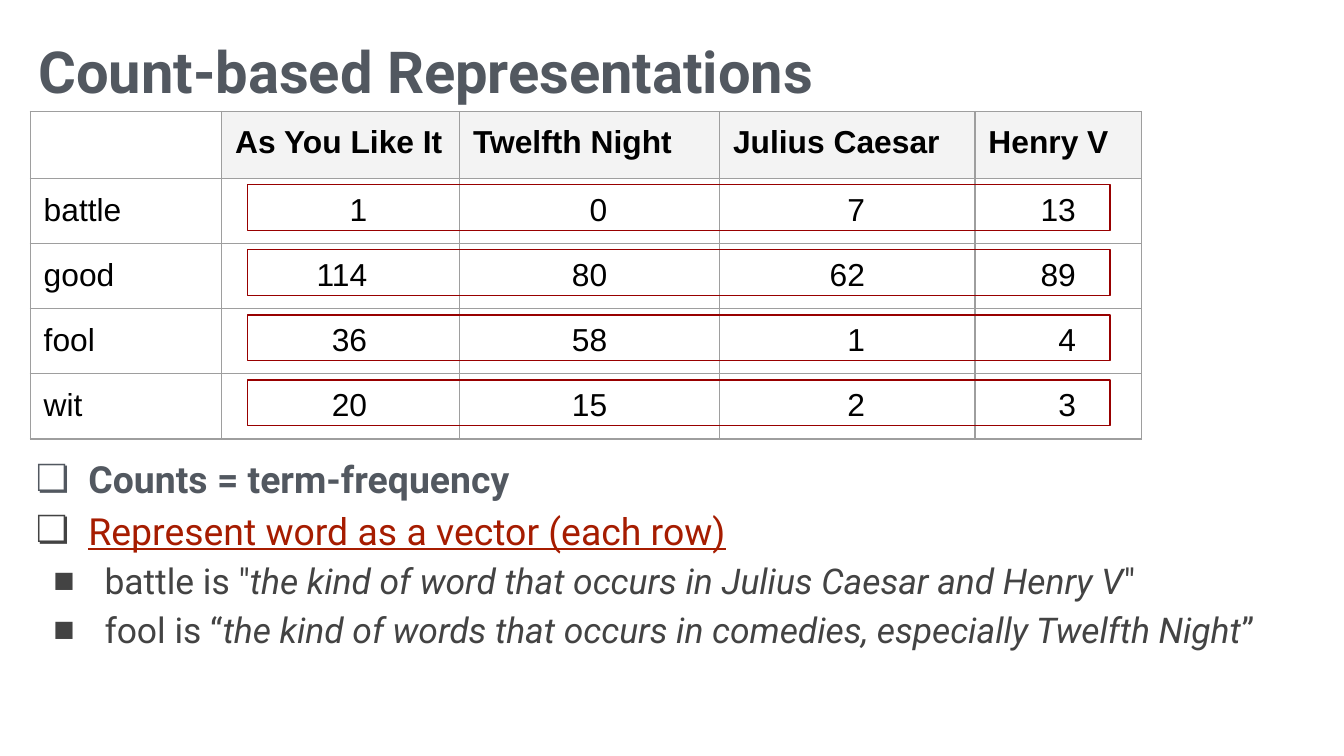
from dataclasses import dataclass

from lxml.etree import SubElement
from pptx import Presentation
from pptx.dml.color import RGBColor
from pptx.enum.shapes import MSO_SHAPE as Shape
from pptx.enum.text import MSO_ANCHOR as Anchor, MSO_AUTO_SIZE as AutoSize, PP_ALIGN as Align
from pptx.oxml import parse_xml
from pptx.oxml.ns import nsdecls, qn
from pptx.util import Inches, Pt

GRID = 0.1  # inches per column and per row
COLUMNS, ROWS = 100, 56.25


@dataclass(frozen=True)
class Theme:
    heading: str = "525860"
    body: str = "434343"
    accent: str = "A61C00"
    table_text: str = "000000"
    header_fill: str = "F3F3F3"
    border: str = "9E9E9E"
    frame: str = "980000"
    font: str = "Roboto"
    table_font: str = "Arial"
    bullet_fonts: tuple = ("Roboto", "Arial")
    title_size: int = 31
    bullet_sizes: tuple = (20, 19)
    table_size: int = 17
    line_width: float = 0.75


def grid(*lengths):
    return [Inches(length * GRID) for length in lengths]


def write(paragraph, text, font, size, color, bold=False, italic=False, underline=False):
    run = paragraph.add_run()
    run.text = text
    run.font.name, run.font.size = font, Pt(size)
    run.font.color.rgb = RGBColor.from_string(color)
    run.font.bold, run.font.italic, run.font.underline = bold, italic, underline


def set_margins(frame, margin):
    frame.margin_left = frame.margin_right = frame.margin_top = frame.margin_bottom = margin


class SlideBuilder:
    def __init__(self, presentation, theme):
        self.theme = theme
        self.slide = presentation.slides.add_slide(presentation.slide_layouts[5])

    def title(self, text, box):
        shape = self.slide.shapes.title
        shape.left, shape.top, shape.width, shape.height = grid(*box)
        frame = shape.text_frame
        frame.auto_size, frame.vertical_anchor = AutoSize.NONE, Anchor.TOP
        set_margins(frame, Inches(0.06))
        frame.paragraphs[0].alignment = Align.LEFT
        write(frame.paragraphs[0], text, self.theme.font, self.theme.title_size,
              self.theme.heading, bold=True)

    def bullets(self, items, box):
        """Each item is (level, bullet colour, runs); a run is (text, format)."""
        frame = self.slide.shapes.add_textbox(*grid(*box)).text_frame
        frame.word_wrap = True
        set_margins(frame, Inches(0.1))
        for index, (level, color, runs) in enumerate(items):
            paragraph = frame.add_paragraph() if index else frame.paragraphs[0]
            paragraph.level, paragraph.line_spacing = level, 1.15
            self.mark(paragraph, level, color)
            for text, style in runs:
                write(paragraph, text, self.theme.font, self.theme.bullet_sizes[level],
                      **{"color": self.theme.body, **style})

    def mark(self, paragraph, level, color):
        properties = paragraph._p.get_or_add_pPr()
        properties.set("marL", str(Inches((0.5, 0.62)[level])))
        properties.set("indent", str(-Inches((0.39, 0.38)[level])))
        SubElement(SubElement(properties, qn("a:buClr")), qn("a:srgbClr")).set("val", color)
        SubElement(properties, qn("a:buFont")).set("typeface", self.theme.bullet_fonts[level])
        SubElement(properties, qn("a:buChar")).set("char", "❏■"[level])

    def table(self, rows, left, top, widths, heights):
        box = grid(left, top, sum(widths), sum(heights))
        table = self.slide.shapes.add_table(len(rows), len(widths), *box).table
        table.first_row = table.horz_banding = False
        for column, width in zip(table.columns, grid(*widths)):
            column.width = width
        for row, height in zip(table.rows, grid(*heights)):
            row.height = height
        digits = [max(len(str(row[c])) for row in rows[1:]) for c in range(len(widths))]
        for r, values in enumerate(rows):
            for c, value in enumerate(values):
                cell = table.cell(r, c)
                self.cell(cell, str(value), header=r == 0)
                if r and c:
                    self.align_digits(cell, widths[c], digits[c])

    def cell(self, cell, text, header):
        set_margins(cell, Inches(0.1))
        if header and text:
            cell.fill.solid()
            cell.fill.fore_color.rgb = RGBColor.from_string(self.theme.header_fill)
        else:
            cell.fill.background()
        if text:
            write(cell.text_frame.paragraphs[0], text, self.theme.table_font,
                  self.theme.table_size, self.theme.table_text, bold=header)
        for index, side in enumerate(("lnL", "lnR", "lnT", "lnB")):
            cell._tc.get_or_add_tcPr().insert(index, parse_xml(
                f'<a:{side} {nsdecls("a")} w="{Pt(self.theme.line_width)}"><a:solidFill>'
                f'<a:srgbClr val="{self.theme.border}"/></a:solidFill></a:{side}>'))

    def align_digits(self, cell, width, digits):
        """Right-align a number so that the column's longest number is centred."""
        digit_width = 0.556 * self.theme.table_size / 72
        cell.text_frame.paragraphs[0].alignment = Align.RIGHT
        cell.margin_right = Inches((width * GRID - digits * digit_width) / 2)

    def row_frame(self, box):
        shape = self.slide.shapes.add_shape(Shape.RECTANGLE, *grid(*box))
        shape.shadow.inherit = False
        shape.fill.background()
        shape.line.color.rgb = RGBColor.from_string(self.theme.frame)
        shape.line.width = Pt(self.theme.line_width)


def main():
    presentation = Presentation()
    presentation.slide_width, presentation.slide_height = grid(COLUMNS, ROWS)
    theme = Theme()
    builder = SlideBuilder(presentation, theme)

    builder.title("Count-based Representations", (2.25, 2.05, 95.3, 4.9))
    italic = {"italic": True}
    builder.bullets([
        (0, theme.heading, [("Counts = term-frequency", {"color": theme.heading, "bold": True})]),
        (0, theme.body, [("Represent word as a vector (each row)",
                          {"color": theme.accent, "underline": True})]),
        (1, theme.body, [("battle is \"", {}),
                         ("the kind of word that occurs in Julius Caesar and Henry V", italic),
                         ("\"", {})]),
        (1, theme.body, [("fool is “", {}),
                         ("the kind of words that occurs in comedies, especially Twelfth Night",
                          italic),
                         ("”", {})]),
    ], (0.6, 32.45, 98.6, 16.6))

    counts = [
        ("", "As You Like It", "Twelfth Night", "Julius Caesar", "Henry V"),
        ("battle", 1, 0, 7, 13),
        ("good", 114, 80, 62, 89),
        ("fool", 36, 58, 1, 4),
        ("wit", 20, 15, 2, 3),
    ]
    row_height = 4.84
    builder.table(counts, 2.25, 8.3, (14.25, 17.7, 19.35, 19, 12.4), (5, *[row_height] * 4))
    for index in range(len(counts) - 1):
        builder.row_frame((18.4, 13.75 + index * row_height, 64.2, 3.4))

    presentation.save("out.pptx")


if __name__ == "__main__":
    main()
